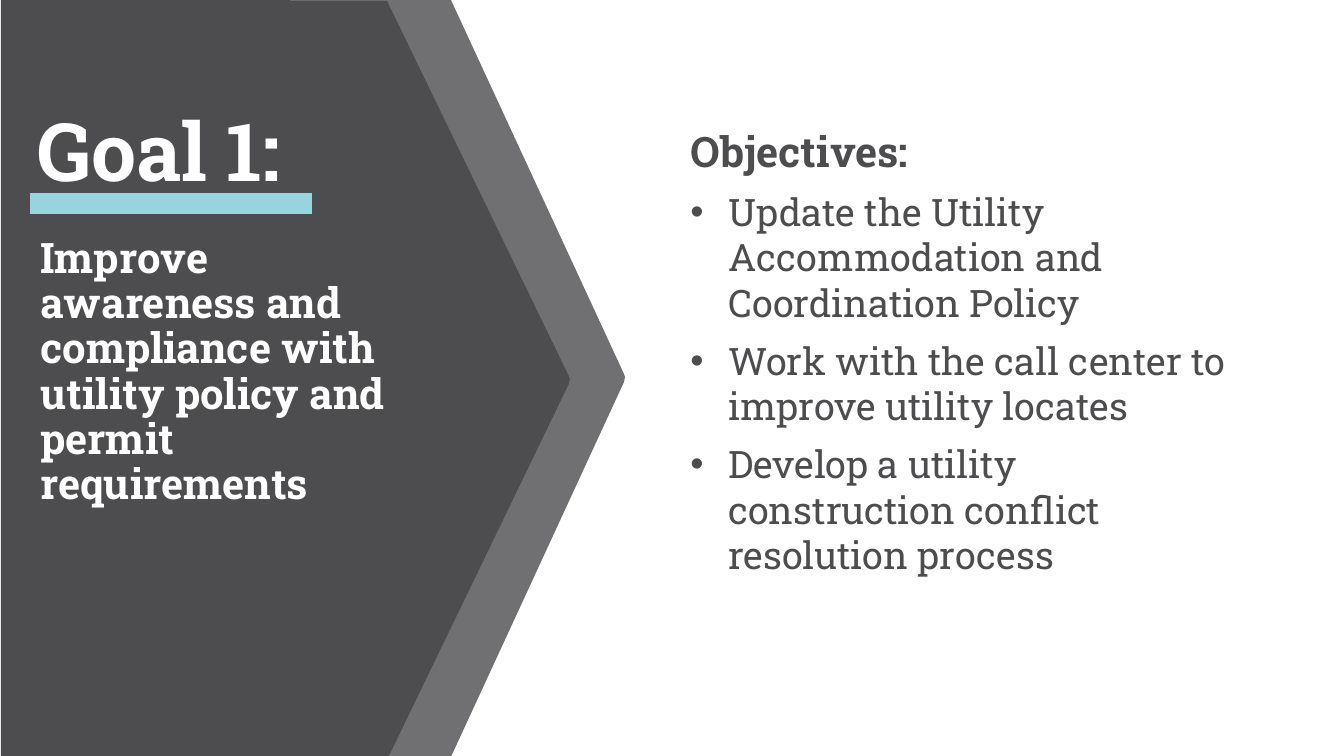
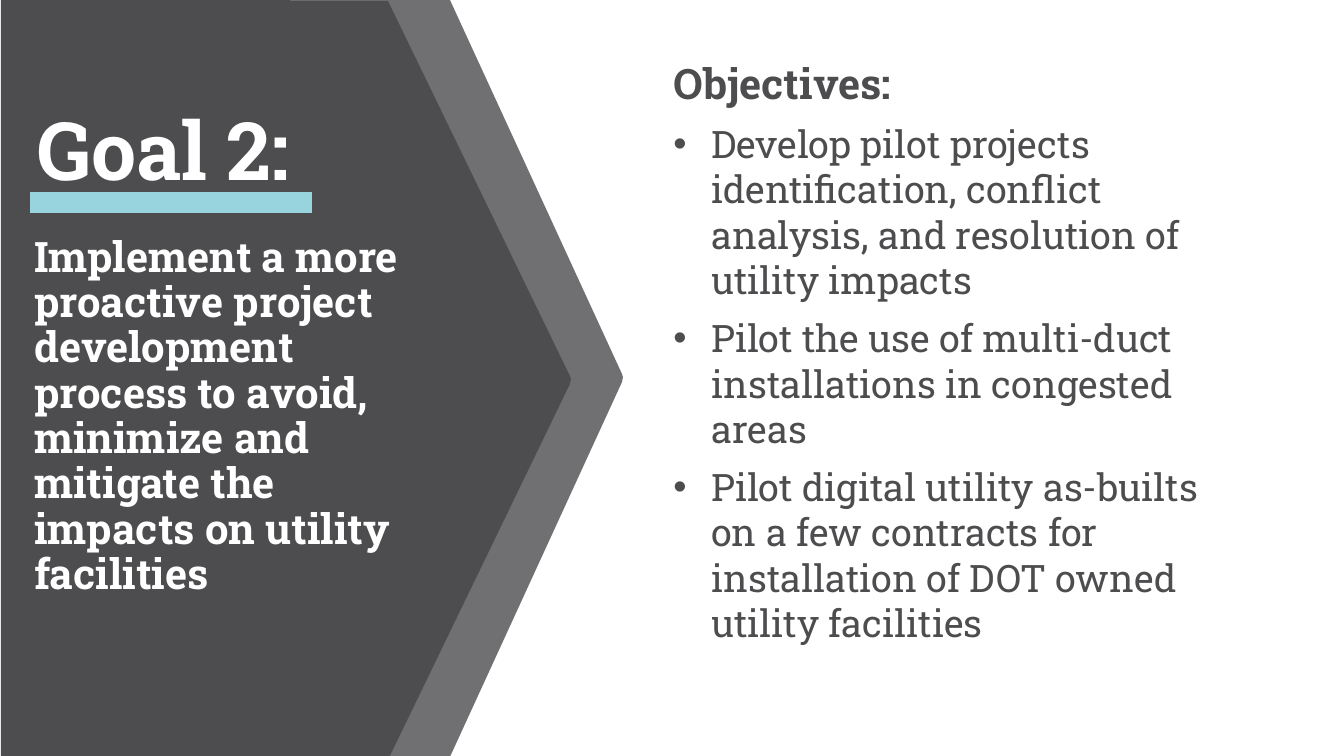
from lxml.etree import SubElement
from pptx import Presentation
from pptx.dml.color import RGBColor
from pptx.enum.shapes import MSO_CONNECTOR, MSO_SHAPE
from pptx.enum.text import MSO_ANCHOR, MSO_AUTO_SIZE, PP_ALIGN
from pptx.oxml.ns import qn
from pptx.util import Pt

FONT = "Roboto Slab"
GRAY, TEAL, WHITE = "4D4D4F", "97D4DE", "FFFFFF"
BULLET_INDENT = 27
OBJECTIVES_RIGHT = 897

# Content, with wedge outlines as (shoulder x, tip x) and boxes in points
GOALS = [
    {
        "title": "Goal 1:",
        "goal": "Improve awareness and compliance with utility policy and permit requirements",
        "objectives": [
            "Update the Utility Accommodation and Coordination Policy",
            "Work with the call center to improve utility locates",
            "Develop a utility construction conflict resolution process",
        ],
        "outer": (321.8, 446.4), "inner": (276.5, 407),
        "title_top": 80, "goal_box": (21.6, 165.6, 289.4, 270), "objectives_left": 486,
    },
    {
        "title": "Goal 2:",
        "goal": "Implement a more proactive project development process to avoid, "
                "minimize and mitigate the impacts on utility facilities",
        "objectives": [
            "Develop pilot projects identification, conflict analysis, and resolution of utility impacts",
            "Pilot the use of multi-duct installations in congested areas",
            "Pilot digital utility as-builts on a few contracts for installation of DOT owned utility facilities",
        ],
        "outer": (321.1, 445), "inner": (277.2, 407.8),
        "title_top": 79.2, "goal_box": (17.3, 164.9, 296.6, 301.7), "objectives_left": 473.8,
    },
]


def rgb(color):
    return RGBColor.from_string(color)


def paint(shape, color, alpha=None):
    shape.shadow.inherit = False
    shape.fill.solid()
    shape.fill.fore_color.rgb = rgb(color)
    shape.line.fill.background()
    if alpha:
        clr = next(shape.element.spPr.iter(qn("a:srgbClr")))
        SubElement(clr, qn("a:alpha")).set("val", str(alpha * 1000))


def add_wedge(s, left, top, outline, alpha=None):
    """Block whose right side comes to a slightly blunted tip."""
    shoulder, tip = outline
    bottom, mid = top + 542, top + 270
    points = [(shoulder, top), (tip - 0.7, mid - 2.2), (tip, mid),
              (tip - 0.7, mid + 3.6), (shoulder, bottom), (left, bottom)]
    builder = s.shapes.build_freeform(Pt(left), Pt(top))
    builder.add_line_segments([(Pt(x), Pt(y)) for x, y in points], close=True)
    paint(builder.convert_to_shape(), GRAY, alpha)


def add_rule(s, y):
    line = s.shapes.add_connector(MSO_CONNECTOR.STRAIGHT, Pt(21.6), Pt(y), Pt(223.2), Pt(y))
    line.line.color.rgb = rgb(TEAL)
    line.line.width = Pt(15)
    SubElement(line.element.spPr, qn("a:effectLst"))


def place(s, sp, box, anchor):
    """Position a placeholder and bring it in front of the shapes."""
    sp.left, sp.top, sp.width, sp.height = map(Pt, box)
    s.shapes.element.append(sp.element)
    tf = sp.text_frame
    tf.word_wrap = True
    tf.auto_size = MSO_AUTO_SIZE.NONE
    tf.vertical_anchor = anchor
    return tf


def write(p, text, size, color, bold=True, spacing=1.0, after=0, bullet=False):
    p.text = text
    pPr = p._p.get_or_add_pPr()
    indent = Pt(BULLET_INDENT) if bullet else 0
    pPr.set("marL", str(indent))
    pPr.set("indent", str(-indent))
    if bullet:
        SubElement(pPr, qn("a:buFont")).set("typeface", "Arial")
        SubElement(pPr, qn("a:buChar")).set("char", "•")
    else:
        SubElement(pPr, qn("a:buNone"))
    p.alignment = PP_ALIGN.LEFT
    p.line_spacing = spacing
    p.space_before, p.space_after = Pt(0), Pt(after)
    for r in p.runs:
        r.font.name, r.font.size, r.font.bold = FONT, Pt(size), bold
        r.font.color.rgb = rgb(color)


def add_goal_slide(prs, goal):
    s = prs.slides.add_slide(prs.slide_layouts[3])
    title, statement, objectives = s.placeholders

    # Gray panel pointing right
    paint(s.shapes.add_shape(MSO_SHAPE.RECTANGLE, Pt(0.7), Pt(-0.7), Pt(206.6), Pt(542)), GRAY)
    add_wedge(s, 193, -0.7, goal["outer"], alpha=80)
    add_wedge(s, 141, 0.7, goal["inner"])

    # Goal title, rule and statement
    top = goal["title_top"]
    tf = place(s, title, (19.4, top, 244, 62), MSO_ANCHOR.MIDDLE)
    write(tf.paragraphs[0], goal["title"], 57.5, WHITE, spacing=0.9)
    add_rule(s, top + 65.4)
    tf = place(s, statement, goal["goal_box"], MSO_ANCHOR.TOP)
    write(tf.paragraphs[0], goal["goal"], 30, WHITE, spacing=0.9)

    # Objectives list
    left = goal["objectives_left"]
    tf = place(s, objectives, (left, 15, OBJECTIVES_RIGHT - left, 472), MSO_ANCHOR.MIDDLE)
    write(tf.paragraphs[0], "Objectives:", 30, GRAY, after=9)
    for text in goal["objectives"]:
        last = text == goal["objectives"][-1]
        write(tf.add_paragraph(), text, 27, GRAY, bold=False, after=0 if last else 9, bullet=True)


def main():
    prs = Presentation()
    prs.slide_width, prs.slide_height = Pt(960), Pt(540)
    for goal in GOALS:
        add_goal_slide(prs, goal)
    prs.save("out.pptx")


if __name__ == "__main__":
    main()
